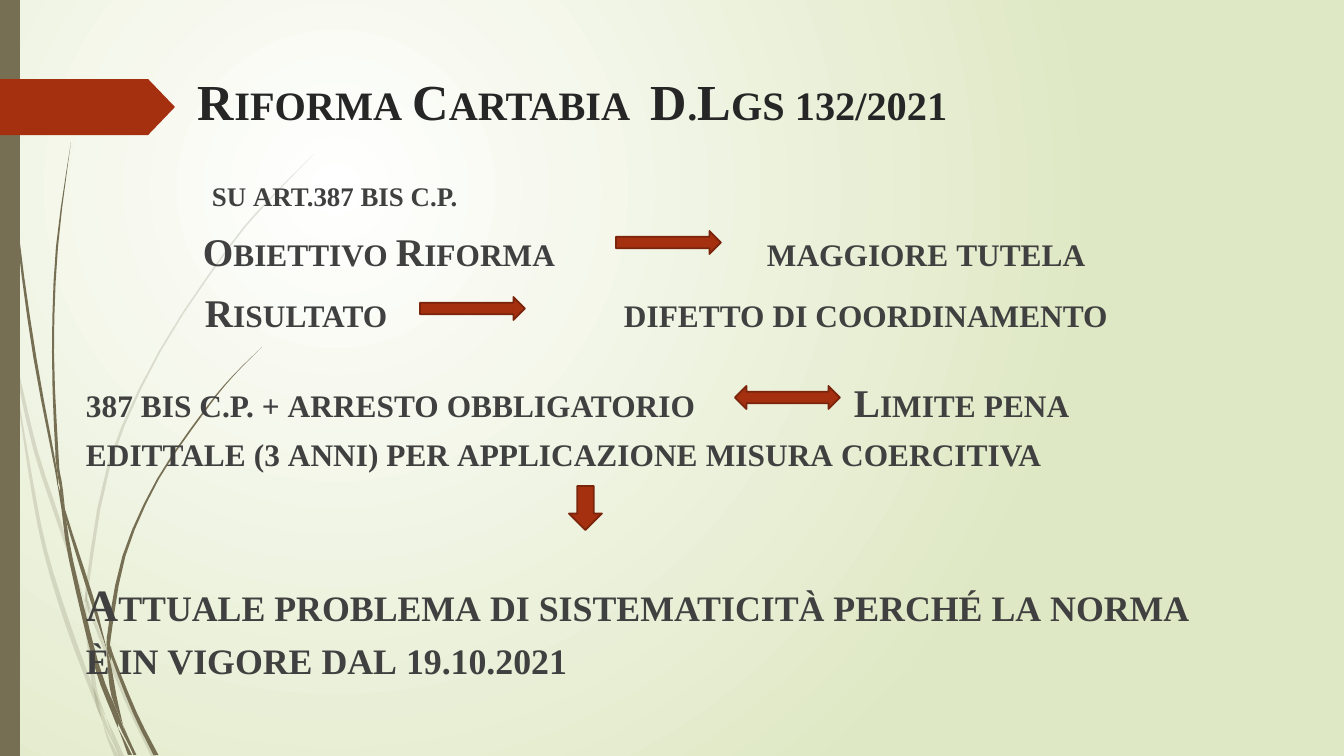
from pptx import Presentation
from pptx import util as u
from pptx.dml.color import RGBColor
from pptx.enum import shapes, text
from pptx.oxml import parse_xml
from pptx.oxml.ns import nsdecls, qn

SCALE = 914400 / 100.8
FONT = "Times New Roman"
COLORS = {
    "white": "FFFFFF",
    "pale green": "DFE8C4",
    "olive": "766F54",
    "rust": "A53010",
    "dark rust": "7A240C",
    "title": "262626",
    "body": "404040",
}

FAINT_STEMS = [
    [(0, 292, 8), (5, 321, 4), (11, 353, 0)],
    [(14, 348, 0), (19, 379, 3), (36, 452, 4), (60, 525, 4), (85, 604, 0)],
    [(89, 601, 0), (91, 613, 3), (126, 699, 4), (154, 757, 5)],
    [(106, 717, 0), (114, 737, 3), (122, 757, 5)],
    [(11, 353, 0), (30, 473, 3), (45, 550, 4), (68, 625, 5), (93, 693, 4),
     (102, 720, 0)],
    [(85, 604, 0), (87, 625, 4), (90, 651, 4), (95, 690, 4), (106, 717, 0)],
    [(314, 154, 0), (270, 199, 2), (230, 246, 2), (160, 351, 2), (109, 465, 3),
     (87, 589, 3), (88, 601, 0)],
    [(102, 720, 0), (108, 738, 2), (117, 757, 5)],
    [(86, 591, 0), (87, 604, 3), (89, 615, 0)],
    [(94, 688, 0), (100, 711, 4), (120, 757, 0)],
]
DARK_STEMS = [
    [(4, 0, 1), (8, 111, 1), (18, 235, 2), (35, 358, 3), (56, 470, 2),
     (57, 485, 0)],
    [(60, 476, 0), (64, 509, 2), (91, 596, 4), (107, 650, 0)],
    [(111, 646, 0), (113, 658, 3), (135, 713, 4), (156, 755, 5)],
    [(57, 481, 0), (63, 509, 3), (71, 560, 4), (96, 663, 5), (114, 712, 5),
     (118, 728, 0)],
    [(71, 142, 0), (57, 247, 2), (53, 352, 2), (57, 454, 3), (60, 476, 0)],
    [(123, 725, 0), (129, 741, 2), (135, 755, 3)],
    [(55, 453, 0), (60, 480, 3), (65, 509, 0)],
    [(262, 347, 0), (233, 376, 1), (206, 409, 2), (158, 479, 2), (124, 556, 3),
     (109, 637, 4), (111, 646, 0)],
    [(118, 728, 0), (124, 741, 2), (130, 755, 4)],
    [(107, 650, 0), (110, 670, 4), (114, 696, 5), (123, 725, 0)],
    [(107, 636, 0), (109, 649, 4), (111, 661, 0)],
    [(111, 697, 0), (119, 721, 4), (134, 755, 0)],
]


def px(length):
    return u.Emu(round(length * SCALE))


def color(name):
    return RGBColor.from_string(COLORS[name])


def paint(shape, fill, line=None):
    shape.shadow.inherit = False
    shape.fill.solid()
    shape.fill.fore_color.rgb = color(fill)
    if line:
        shape.line.color.rgb = color(line)
        shape.line.width = u.Pt(1.25)
    else:
        shape.line.fill.background()


def add_preset(slide, kind, box, fill, line=None):
    shape = slide.shapes.add_shape(kind, *map(px, box))
    paint(shape, fill, line)
    return shape


def add_text_box(slide, box):
    frame = slide.shapes.add_textbox(*map(px, box)).text_frame
    frame.word_wrap = True
    frame.margin_left = frame.margin_right = 0
    frame.margin_top = frame.margin_bottom = 0
    return frame


def write(paragraph, words, size, ink, leading, before=0, tabs=()):
    paragraph.alignment = text.PP_ALIGN.LEFT
    paragraph.line_spacing = u.Pt(leading)
    paragraph.space_before = px(before)
    run = paragraph.add_run()
    run.text = words
    run.font.name = FONT
    run.font.size = u.Pt(size)
    run.font.bold = True
    run.font.color.rgb = color(ink)
    run.font._element.set("cap", "small")
    if tabs:
        stops = "".join(f'<a:tab pos="{px(tab)}" algn="l"/>' for tab in tabs)
        properties = paragraph._p.get_or_add_pPr()
        properties.append(parse_xml(f'<a:tabLst {nsdecls("a")}>{stops}</a:tabLst>'))


def smooth_curve(knots, steps=3):
    padded = [knots[0], *knots, knots[-1]]
    points = []
    for a, b, c, d in zip(padded, padded[1:], padded[2:], padded[3:]):
        for step in range(steps):
            t = step / steps
            points.append(tuple(
                q + t * ((r - p) + t * ((2 * p - 5 * q + 4 * r - s)
                                        + t * (3 * q - p - 3 * r + s))) / 2
                for p, q, r, s in zip(a, b, c, d)))
    return points + [knots[-1]]


def add_stem(slide, left, top, knots, opacity=100):
    curve = smooth_curve(knots)
    left_edge = [(px(left + x - w / 2), px(top + y)) for x, y, w in curve]
    right_edge = [(px(left + x + w / 2), px(top + y)) for x, y, w in curve]
    outline = left_edge + right_edge[::-1]
    builder = slide.shapes.build_freeform(*outline[0], scale=1.0)
    builder.add_line_segments(outline[1:], close=True)
    stem = builder.convert_to_shape()
    paint(stem, "olive")
    if opacity < 100:
        ink = stem._element.spPr.find(".//" + qn("a:srgbClr"))
        ink.append(parse_xml(f'<a:alpha {nsdecls("a")} val="{opacity * 1000}"/>'))


def add_background(slide):
    fill = slide.background.fill
    fill.gradient()
    for stop, name in zip(fill.gradient_stops, ("white", "pale green")):
        stop.color.rgb = color(name)
    gradient = slide.element.find(".//" + qn("a:gradFill"))
    gradient.replace(gradient.find(qn("a:lin")), parse_xml(
        f'<a:path {nsdecls("a")} path="circle">'
        '<a:fillToRect l="50000" t="50000" r="100000" b="100000"/></a:path>'))


def add_side_decoration(slide, left, top, height):
    for knots in FAINT_STEMS:
        add_stem(slide, left, top, knots, opacity=20)
    for knots in DARK_STEMS:
        add_stem(slide, left, top, knots)
    add_preset(slide, shapes.MSO_SHAPE.RECTANGLE, (left, top, 20, height), "olive")
    tag = add_preset(slide, shapes.MSO_SHAPE.PENTAGON,
                     (left, top + 79, 175, 56), "rust")
    tag.adjustments[0] = 0.48


def add_title(slide, left, top, width, height):
    frame = add_text_box(slide, (left, top, width, height))
    write(frame.paragraphs[0], "Riforma Cartabia\tD.Lgs 132/2021", size=36,
          ink="title", leading=42, tabs=[453])


def add_body(slide, left, top, width, height):
    lines = [
        ("\tsu art.387 bis c.p.", 24, 30, 0, [126]),
        ("\tObiettivo Riforma\tmaggiore tutela", 28, 34.5, 13, [117, 681]),
        ("\tRisultato\tdifetto di coordinamento", 28, 34.5, 13, [119, 538]),
        ("387 bis c.p. + arresto obbligatorio\tLimite pena edittale (3 anni) "
         "per applicazione misura coercitiva", 28, 34.5, 42, [768]),
        ("Attuale problema di sistematicità perché la norma è in vigore "
         "dal 19.10.2021", 32, 38, 103, []),
    ]
    frame = add_text_box(slide, (left, top, width, height))
    for index, (words, size, leading, before, tabs) in enumerate(lines):
        paragraph = frame.add_paragraph() if index else frame.paragraphs[0]
        write(paragraph, words, size=size, ink="body", leading=leading,
              before=before, tabs=tabs)

    kinds = shapes.MSO_SHAPE
    arrows = [
        (kinds.RIGHT_ARROW, 530, 60, 105, 23),
        (kinds.RIGHT_ARROW, 334, 126, 105, 23),
        (kinds.LEFT_RIGHT_ARROW, 649, 215, 105, 23),
        (kinds.DOWN_ARROW, 483, 315, 33, 44),
    ]
    for kind, x, y, arrow_width, arrow_height in arrows:
        add_preset(slide, kind, (left + x, top + y, arrow_width, arrow_height),
                   "rust", "dark rust")


def main():
    presentation = Presentation()
    presentation.slide_width = px(1344)
    presentation.slide_height = px(756)
    slide = presentation.slides.add_slide(presentation.slide_layouts[6])
    add_background(slide)
    add_side_decoration(slide, 0, 0, 756)
    add_title(slide, 198, 72, 980, 60)
    add_body(slide, 86, 171, 1110, 515)
    presentation.save("out.pptx")


if __name__ == "__main__":
    main()
